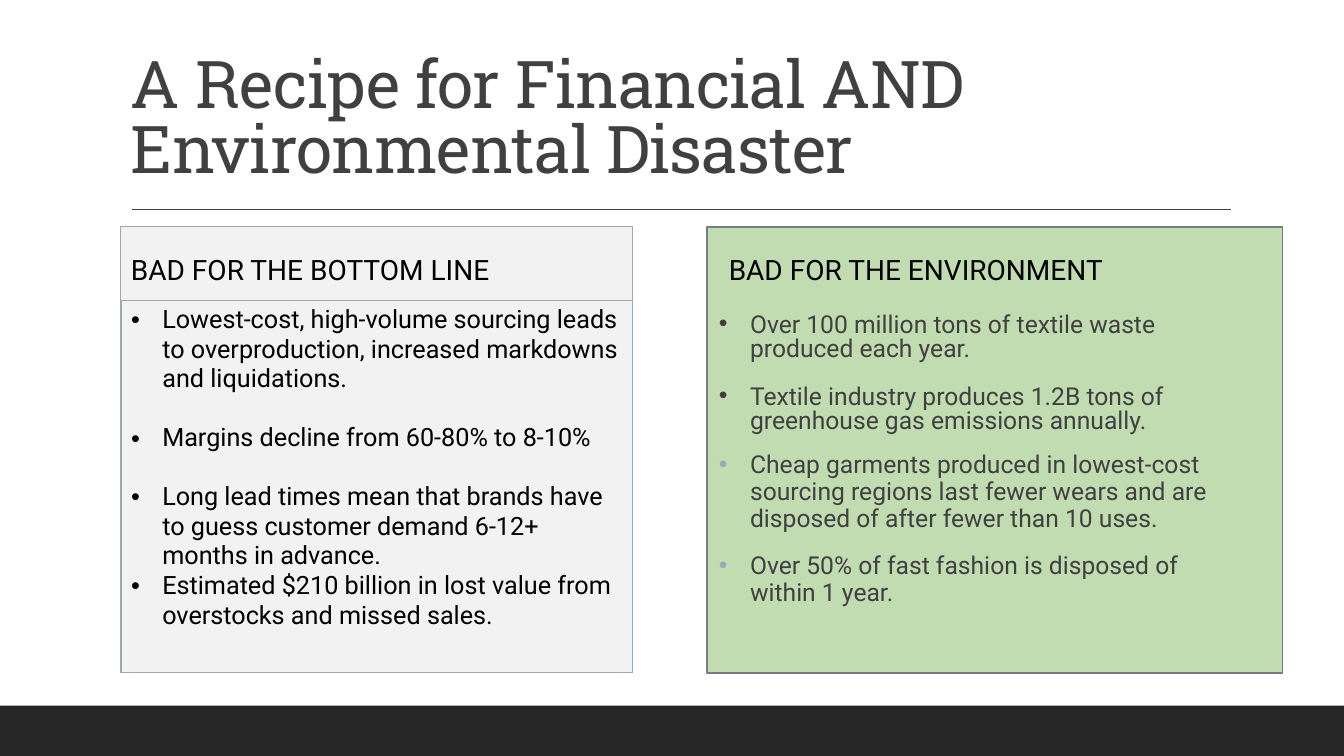
from lxml.etree import SubElement
from pptx import Presentation
from pptx.dml.color import RGBColor
from pptx.enum.shapes import MSO_CONNECTOR, MSO_SHAPE
from pptx.enum.text import MSO_ANCHOR
from pptx.oxml.ns import qn
from pptx.util import Inches, Pt

BLACK = RGBColor(0x00, 0x00, 0x00)
FOOTER = RGBColor(0x26, 0x26, 0x26)
CHARCOAL = RGBColor(0x40, 0x40, 0x40)
PALE_GRAY = RGBColor(0xF2, 0xF2, 0xF2)
MID_GRAY = RGBColor(0xA6, 0xA6, 0xA6)
GREEN = RGBColor(0xC2, 0xDC, 0xB2)
SLATE = RGBColor(0x73, 0x7C, 0x87)
BLUE_GRAY = RGBColor(0x9B, 0xA8, 0xB7)


def add_rectangle(left, top, width, height, fill, line=None, line_width=0):
    shape = slide.shapes.add_shape(
        MSO_SHAPE.RECTANGLE, Inches(left), Inches(top), Inches(width), Inches(height))
    shape.shadow.inherit = False
    shape.fill.solid()
    shape.fill.fore_color.rgb = fill
    if line is None:
        shape.line.fill.background()
    else:
        shape.line.color.rgb = line
        shape.line.width = Pt(line_width)
    return shape


def add_bullets(text_frame, items, size, color):
    text_frame.word_wrap = True
    text_frame.text = "\n".join(item[0] for item in items)
    for paragraph, (_, before, spacing, bullet_color) in zip(text_frame.paragraphs, items):
        properties = paragraph._p.get_or_add_pPr()
        properties.set("marL", str(Inches(0.31)))
        properties.set("indent", str(-Inches(0.31)))
        paragraph.space_before = Pt(before)
        paragraph.line_spacing = spacing
        bullet_fill = SubElement(properties, qn("a:buClr"))
        SubElement(bullet_fill, qn("a:srgbClr")).set("val", str(bullet_color))
        SubElement(properties, qn("a:buFont")).set("typeface", "Arial")
        SubElement(properties, qn("a:buChar")).set("char", "•")
        for run in paragraph.runs:
            run.font.name = "Roboto"
            run.font.size = Pt(size)
            run.font.color.rgb = color


presentation = Presentation()
presentation.slide_width = Inches(13.33)
presentation.slide_height = Inches(7.5)
slide = presentation.slides.add_slide(presentation.slide_layouts[6])

add_rectangle(0, 7, 13.33, 0.5, FOOTER)
rule = slide.shapes.add_connector(
    MSO_CONNECTOR.STRAIGHT, Inches(1.31), Inches(2.08), Inches(12.21), Inches(2.08))
rule.line.color.rgb = CHARCOAL
rule.line.width = Pt(1)
SubElement(rule._element.spPr, qn("a:effectLst"))

add_rectangle(7.01, 2.25, 5.71, 4.43, GREEN, SLATE, 1.25)

title = slide.shapes.add_textbox(Inches(1.2), Inches(0.31), Inches(11), Inches(1.59))
title.text_frame.word_wrap = True
title.text_frame.vertical_anchor = MSO_ANCHOR.BOTTOM
title.text_frame.text = "A Recipe for Financial AND Environmental Disaster"
paragraph = title.text_frame.paragraphs[0]
paragraph.line_spacing = 0.82
run = paragraph.runs[0]
run.font.name = "Roboto Slab"
run.font.size = Pt(47)
run.font.color.rgb = CHARCOAL
run.font._element.set("spc", "-50")

bottom_line_heading = add_rectangle(1.2, 2.25, 5.07, 0.81, PALE_GRAY, MID_GRAY, 0.75)
environment_heading = slide.shapes.add_textbox(
    Inches(7.13), Inches(2.25), Inches(5.07), Inches(0.81))
for heading, text in (
    (bottom_line_heading, "BAD FOR THE BOTTOM LINE"),
    (environment_heading, "BAD FOR THE ENVIRONMENT"),
):
    heading.text_frame.word_wrap = True
    heading.text_frame.vertical_anchor = MSO_ANCHOR.MIDDLE
    heading.text_frame.text = text
    paragraph = heading.text_frame.paragraphs[0]
    paragraph.alignment = 1
    paragraph.line_spacing = 1.1
    paragraph.space_after = Pt(2)
    font = paragraph.runs[0].font
    font.name = "Roboto"
    font.size = Pt(20)
    font.color.rgb = BLACK

table = slide.shapes.add_table(
    1, 1, Inches(1.2), Inches(2.98), Inches(5.07), Inches(3.69)).table
table.first_row = False
table.horz_banding = False
cell = table.cell(0, 0)
add_bullets(cell.text_frame, [
    ("Lowest-cost, high-volume sourcing leads to overproduction, "
     "increased markdowns and liquidations.", 0, 1, BLACK),
    ("Margins decline from 60-80% to 8-10%", 21, 1, BLACK),
    ("Long lead times mean that brands have to guess customer demand "
     "6-12+ months in advance.", 21, 1, BLACK),
    ("Estimated $210 billion in lost value from overstocks and missed sales.", 0, 1, BLACK),
], 18, BLACK)
cell_properties = cell._tc.get_or_add_tcPr()
for side in ("a:lnL", "a:lnR", "a:lnT", "a:lnB"):
    border = SubElement(cell_properties, qn(side), w=str(Pt(1)))
    border_fill = SubElement(border, qn("a:solidFill"))
    SubElement(border_fill, qn("a:srgbClr")).set("val", str(BLUE_GRAY))
cell.fill.solid()
cell.fill.fore_color.rgb = PALE_GRAY

environment = slide.shapes.add_textbox(
    Inches(7.13), Inches(3.06), Inches(5.07), Inches(3.18))
environment.text_frame.margin_left = environment.text_frame.margin_right = 0
add_bullets(environment.text_frame, [
    ("Over 100 million tons of textile waste produced each year.", 0, 0.83, CHARCOAL),
    ("Textile industry produces 1.2B tons of greenhouse gas emissions annually.",
     16.5, 0.83, CHARCOAL),
    ("Cheap garments produced in lowest-cost sourcing regions last fewer wears "
     "and are disposed of after fewer than 10 uses.", 12, 0.92, BLUE_GRAY),
    ("Over 50% of fast fashion is disposed of within 1 year.", 14, 0.92, BLUE_GRAY),
], 17.6, CHARCOAL)

presentation.save("out.pptx")
